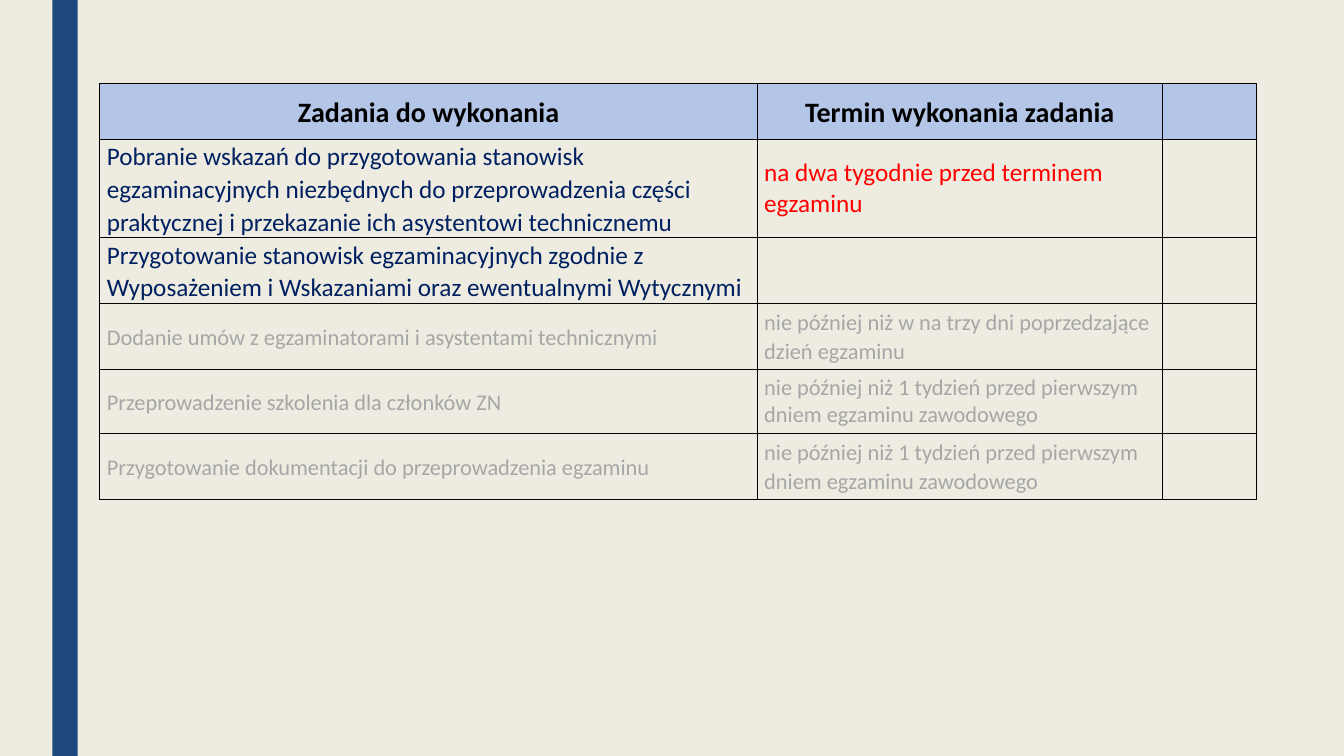
from dataclasses import dataclass

from lxml import etree
from pptx import Presentation
from pptx.dml.color import RGBColor
from pptx.enum import shapes, text
from pptx.oxml import ns
from pptx.util import Inches, Pt


@dataclass(frozen=True)
class Theme:
    font: str = "Calibri"
    background: str = "EEECE1"
    stripe: str = "1F497D"
    header_fill: str = "B4C6E7"
    border: str = "000000"
    border_width: float = 1
    header_text: str = "000000"
    task: str = "002060"
    deadline: str = "FF0000"
    muted: str = "A6A6A6"
    header_size: int = 20
    task_size: int = 18
    muted_size: int = 16
    spacing: float = 1.07


@dataclass(frozen=True)
class Entry:
    words: str
    color: str
    size: int
    spacing: float
    header: bool = False


@dataclass(frozen=True)
class Row:
    height: float
    entries: tuple[Entry, ...]


THEME = Theme()
COLUMN_WIDTHS = (6.52, 4.02, 0.93)


def heading(words: str) -> Entry:
    return Entry(words, THEME.header_text, THEME.header_size, THEME.spacing, True)


def active(words: str, color: str = THEME.task, spacing: float = THEME.spacing) -> Entry:
    return Entry(words, color, THEME.task_size, spacing)


def muted(words: str, spacing: float = THEME.spacing) -> Entry:
    return Entry(words, THEME.muted, THEME.muted_size, spacing)


WEEK_BEFORE = "nie później niż 1 tydzień przed pierwszym dniem egzaminu zawodowego"

ROWS = (
    Row(0.55, (heading("Zadania do wykonania"), heading("Termin wykonania zadania"))),
    Row(0.92, (
        active("Pobranie wskazań do przygotowania stanowisk egzaminacyjnych "
               "niezbędnych do przeprowadzenia części praktycznej i przekazanie "
               "ich asystentowi technicznemu"),
        active("na dwa tygodnie przed terminem egzaminu", THEME.deadline, 1.0),
    )),
    Row(0.65, (
        active("Przygotowanie stanowisk egzaminacyjnych zgodnie z Wyposażeniem "
               "i Wskazaniami oraz ewentualnymi Wytycznymi"),
    )),
    Row(0.65, (
        muted("Dodanie umów z egzaminatorami i asystentami technicznymi"),
        muted("nie później niż w na trzy dni poprzedzające dzień egzaminu"),
    )),
    Row(0.64, (muted("Przeprowadzenie szkolenia dla członków ZN"), muted(WEEK_BEFORE, 1.0))),
    Row(0.65, (
        muted("Przygotowanie dokumentacji do przeprowadzenia egzaminu"),
        muted(WEEK_BEFORE),
    )),
)


def color_of(value: str) -> RGBColor:
    return RGBColor.from_string(value)


def add_borders(cell) -> None:
    properties = cell._tc.get_or_add_tcPr()
    # Border lines come before the fill in the cell properties
    for index, side in enumerate(("lnL", "lnR", "lnT", "lnB")):
        line = etree.Element(ns.qn(f"a:{side}"), w=str(Pt(THEME.border_width)))
        fill = etree.SubElement(line, ns.qn("a:solidFill"))
        etree.SubElement(fill, ns.qn("a:srgbClr"), val=THEME.border)
        properties.insert(index, line)


def write_entry(cell, entry: Entry) -> None:
    cell.vertical_anchor = text.MSO_ANCHOR.MIDDLE
    cell.margin_left = cell.margin_right = Inches(0.07)
    cell.margin_top = cell.margin_bottom = 0
    para = cell.text_frame.paragraphs[0]
    para.alignment = text.PP_ALIGN.CENTER if entry.header else text.PP_ALIGN.LEFT
    para.line_spacing = entry.spacing
    span = para.add_run()
    span.text = entry.words
    span.font.name = THEME.font
    span.font.size = Pt(entry.size)
    span.font.bold = entry.header
    span.font.color.rgb = color_of(entry.color)


def add_stripe(page) -> None:
    stripe = page.shapes.add_shape(
        shapes.MSO_SHAPE.RECTANGLE, Inches(0.52), 0, Inches(0.25), Inches(7.5))
    stripe.shadow.inherit = False
    stripe.fill.solid()
    stripe.fill.fore_color.rgb = color_of(THEME.stripe)
    stripe.line.fill.background()


def add_schedule(page) -> None:
    table = page.shapes.add_table(
        len(ROWS), len(COLUMN_WIDTHS), Inches(0.99), Inches(0.83),
        Inches(sum(COLUMN_WIDTHS)), Inches(sum(row.height for row in ROWS))).table
    table.horz_banding = False
    for column, width in zip(table.columns, COLUMN_WIDTHS):
        column.width = Inches(width)
    for index, row in enumerate(ROWS):
        table.rows[index].height = Inches(row.height)
        for cell in table.rows[index].cells:
            if index == 0:
                cell.fill.solid()
                cell.fill.fore_color.rgb = color_of(THEME.header_fill)
            else:
                cell.fill.background()
            add_borders(cell)
        for cell, entry in zip(table.rows[index].cells, row.entries):
            write_entry(cell, entry)


def main() -> None:
    deck = Presentation()
    deck.slide_width, deck.slide_height = Inches(13.33), Inches(7.5)

    # Page background and side stripe
    page = deck.slides.add_slide(deck.slide_layouts[6])
    page.background.fill.solid()
    page.background.fill.fore_color.rgb = color_of(THEME.background)
    add_stripe(page)

    # Tasks and their deadlines
    add_schedule(page)
    deck.save("out.pptx")


if __name__ == "__main__":
    main()
